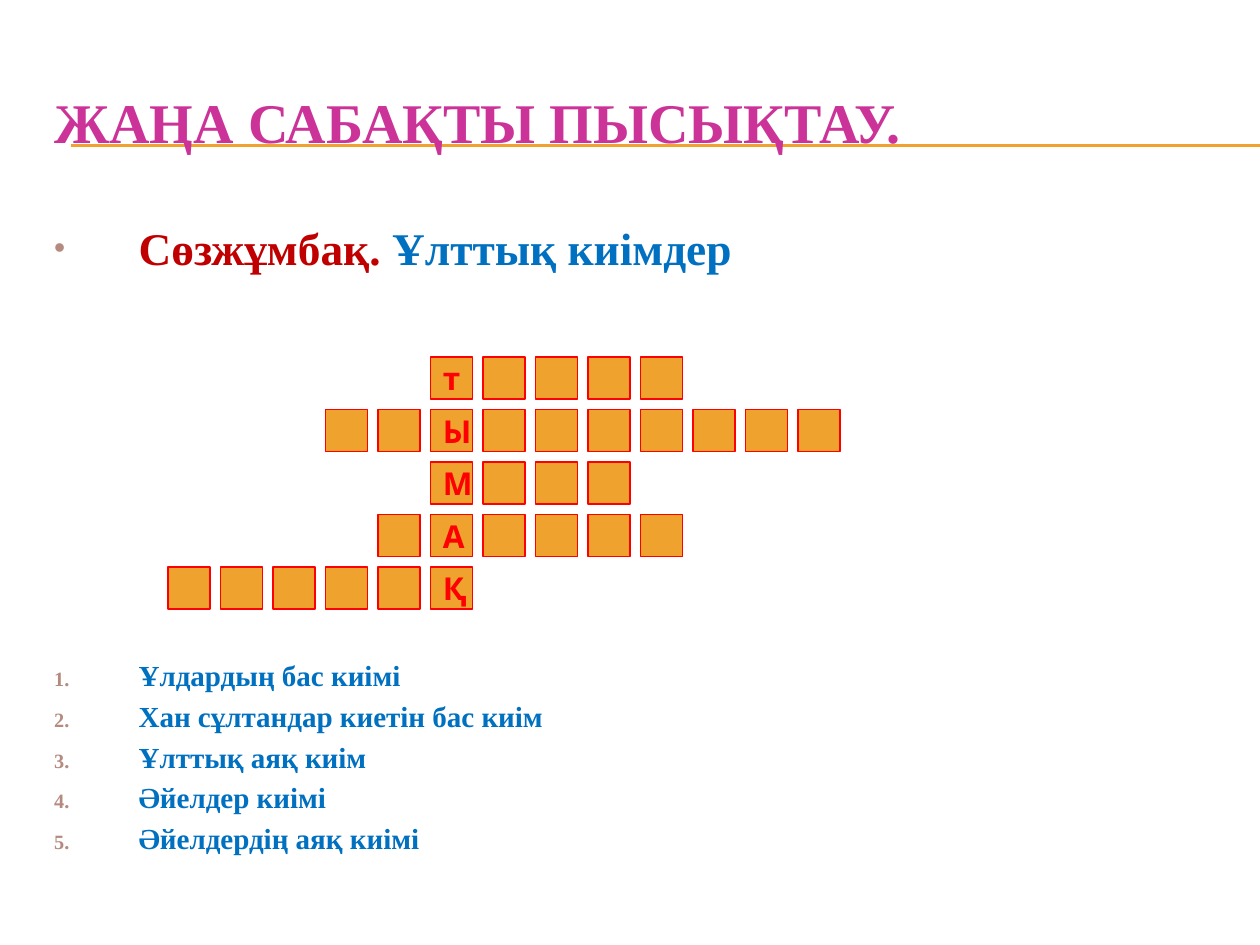
from pptx import Presentation
from pptx import util as u
from pptx.dml import color
from pptx.enum import shapes, text
from pptx.oxml import ns
from lxml import etree

SERIF = "Times New Roman"
AMBER, RED, BLUE = "F0A22E", "FF0000", "0070C0"
PITCH = 5 / 12
CELL = 1 / 3
KEY_LEFT, GRID_TOP = 8.2 * PITCH, 6.8 * PITCH
ROWS = [("т", 0, 4), ("Ы", 2, 7), ("М", 0, 3), ("А", 1, 4), ("Қ", 5, 0)]
CLUES = [
    "Ұлдардың бас киімі",
    "Хан сұлтандар киетін бас киім",
    "Ұлттық аяқ киім",
    "Әйелдер киімі",
    "Әйелдердің аяқ киімі",
]


def rgb(value):
    return color.RGBColor.from_string(value)


def add_span(para, words, size, ink, face=SERIF):
    span = para.add_run()
    span.text = words
    span.font.size = u.Pt(size)
    span.font.name = face
    span.font.bold = True
    span.font.color.rgb = rgb(ink)


def place(box, left, top, width, height):
    box.left, box.top = u.Inches(left), u.Inches(top)
    box.width, box.height = u.Inches(width), u.Inches(height)


def add_bullet(para, tag, **attributes):
    properties = para._p.get_or_add_pPr()
    properties.set("marL", str(u.Inches(0.67)))
    properties.set("indent", str(u.Inches(-0.67)))
    tint = etree.SubElement(properties, ns.qn("a:buClr"))
    etree.SubElement(tint, ns.qn("a:srgbClr"), val="B58B80")
    etree.SubElement(properties, ns.qn("a:buSzPct"), val="70000")
    etree.SubElement(properties, ns.qn(tag), **attributes)


def add_rule_behind(page, top):
    rule = page.shapes.add_connector(
        shapes.MSO_CONNECTOR.STRAIGHT,
        u.Inches(0.56), u.Inches(top), u.Inches(10), u.Inches(top))
    rule.line.color.rgb = rgb(AMBER)
    rule.line.width = u.Pt(0.75)
    etree.SubElement(rule._element.spPr, ns.qn("a:effectLst"))
    page.shapes.title._element.addprevious(rule._element)


def fill_title(page):
    title = page.shapes.title
    place(title, 0.33, 0.5, 9.5, 0.92)
    frame = title.text_frame
    frame.auto_size = text.MSO_AUTO_SIZE.NONE
    frame.vertical_anchor = text.MSO_ANCHOR.MIDDLE
    para = frame.paragraphs[0]
    para.alignment = text.PP_ALIGN.LEFT
    add_span(para, "ЖАҢА САБАҚТЫ ПЫСЫҚТАУ.", 32, "CC3399")


def fill_body(page):
    body = page.placeholders[1]
    place(body, 0.33, 1.7, 9.5, 4.95)
    frame = body.text_frame
    frame.auto_size = text.MSO_AUTO_SIZE.NONE
    heading = frame.paragraphs[0]
    add_bullet(heading, "a:buChar", char="•")
    heading.space_before = u.Pt(0)
    add_span(heading, "Сөзжұмбақ. ", 25.9, "C00000")
    add_span(heading, "Ұлттық киімдер", 25.9, BLUE)
    for index, clue in enumerate(CLUES):
        para = frame.add_paragraph()
        add_bullet(para, "a:buAutoNum", type="arabicPeriod")
        para.space_before = u.Pt(3.4 if index else 218.5)
        add_span(para, clue, 16.6, BLUE)


def add_cell(page, column, row, letter=None):
    cell = page.shapes.add_shape(
        shapes.MSO_SHAPE.RECTANGLE,
        u.Inches(KEY_LEFT + column * PITCH), u.Inches(GRID_TOP + row * PITCH),
        u.Inches(CELL), u.Inches(CELL))
    cell.shadow.inherit = False
    cell.fill.solid()
    cell.fill.fore_color.rgb = rgb(AMBER)
    cell.line.color.rgb = rgb(RED)
    cell.line.width = u.Pt(0.75)
    if letter:
        frame = cell.text_frame
        frame.word_wrap = False
        frame.vertical_anchor = text.MSO_ANCHOR.MIDDLE
        para = frame.paragraphs[0]
        para.alignment = text.PP_ALIGN.LEFT
        add_span(para, letter, 18, RED, "Karla")


def add_crossword(page):
    for row, (letter, before, after) in enumerate(ROWS):
        for column in range(-before, after + 1):
            add_cell(page, column, row, None if column else letter)


def main():
    deck = Presentation()
    deck.slide_width, deck.slide_height = u.Inches(10), u.Inches(7.5)
    page = deck.slides.add_slide(deck.slide_layouts[1])
    for top in (1.15, 1.16):
        add_rule_behind(page, top)
    fill_title(page)
    fill_body(page)
    add_crossword(page)
    deck.save("out.pptx")


if __name__ == "__main__":
    main()
